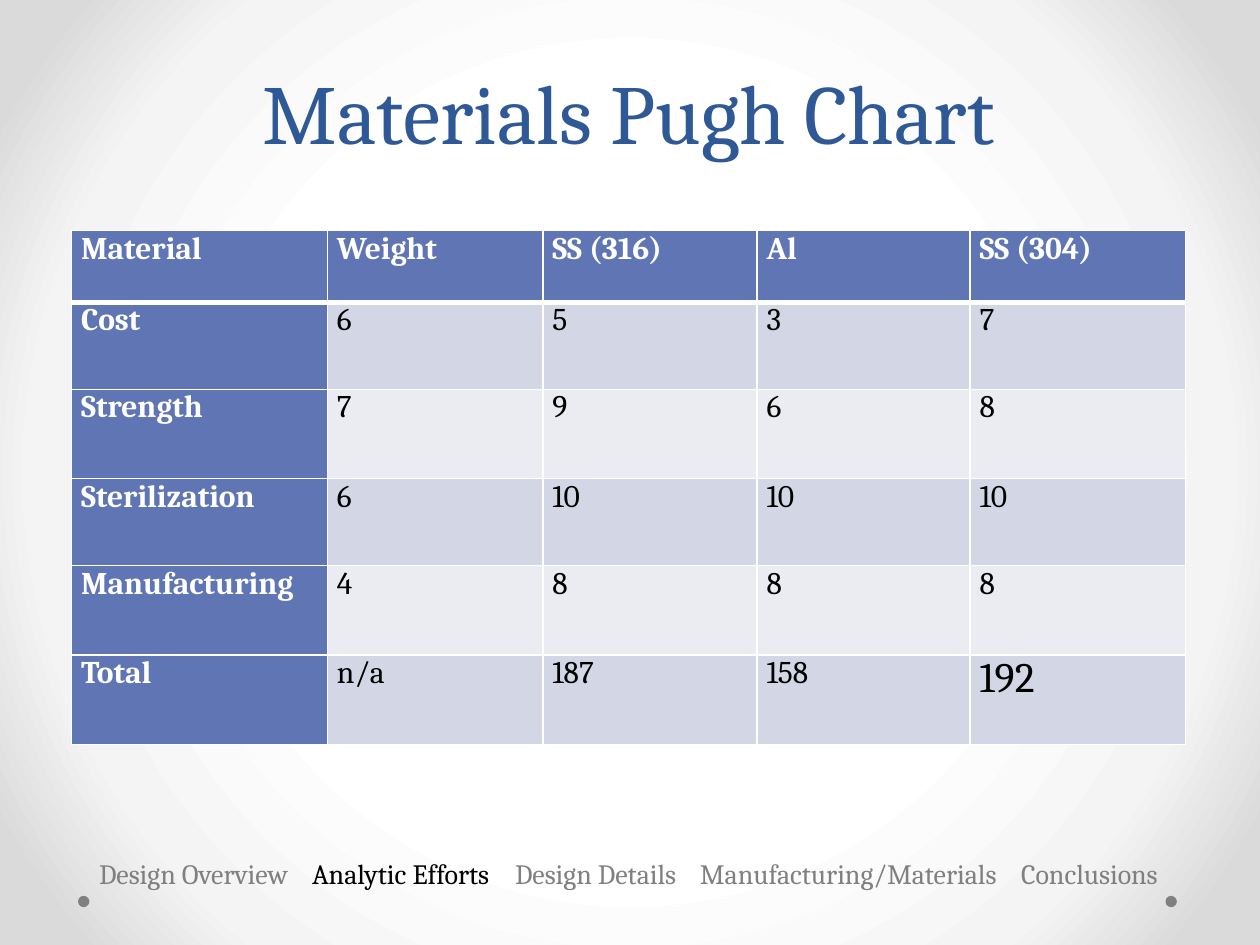
from pptx import Presentation
from pptx.dml.color import RGBColor
from pptx.enum.shapes import MSO_SHAPE as Shape
from pptx.enum.text import MSO_ANCHOR as Anchor, MSO_AUTO_SIZE as AutoSize, PP_ALIGN as Align
from pptx.oxml import parse_xml
from pptx.oxml.ns import nsdecls
from pptx.util import Pt

FONT = "Cambria"
COLORS = {
    "white": "FFFFFF",
    "mist": "F4F4F4",
    "silver": "DADADA",
    "gray": "808080",
    "black": "000000",
    "title": "2F5897",
    "header": "6076B4",
    "band_dark": "D2D6E5",
    "band_light": "EAECF2",
}
COLUMN_WIDTHS = [146.2, 123.1, 122.4, 121.7, 123.1]
ROW_HEIGHTS = [41, 49.7, 51.1, 49.7, 51.1, 51.1]
PUGH_ROWS = [
    ["Material", "Weight", "SS (316)", "Al", "SS (304)"],
    ["Cost", "6", "5", "3", "7"],
    ["Strength", "7", "9", "6", "8"],
    ["Sterilization", "6", "10", "10", "10"],
    ["Manufacturing", "4", "8", "8", "8"],
    ["Total", "n/a", "187", "158", "192"],
]
SECTIONS = ["Design Overview", "Analytic Efforts", "Design Details",
            "Manufacturing/Materials", "Conclusions"]
CURRENT_SECTION = "Analytic Efforts"
SECTION_TABS = [121.7, 237.7, 343.4, 526.9]


def rgb(name):
    return RGBColor.from_string(COLORS[name])


def add_run(paragraph, text, size, color, bold=False):
    run = paragraph.add_run()
    run.text = text
    run.font.name = FONT
    run.font.size = Pt(size)
    run.font.bold = bold
    run.font.color.rgb = rgb(color)


def set_background(slide):
    stops = "".join(
        f'<a:gs pos="{percent * 1000}"><a:srgbClr val="{COLORS[name]}"/></a:gs>'
        for percent, name in [(50, "white"), (76, "mist"), (92, "silver")])
    background = parse_xml(
        f'<p:bg {nsdecls("p", "a")}><p:bgPr><a:gradFill rotWithShape="1">'
        f'<a:gsLst>{stops}</a:gsLst><a:path path="circle">'
        '<a:fillToRect l="50000" t="50000" r="50000" b="50000"/></a:path>'
        '</a:gradFill><a:effectLst/></p:bgPr></p:bg>')
    slide.element.cSld.insert(0, background)


def add_dot(slide, left):
    dot = slide.shapes.add_shape(Shape.OVAL, Pt(left), Pt(511.9), Pt(6.5), Pt(6.5))
    dot.shadow.inherit = False
    dot.fill.solid()
    dot.fill.fore_color.rgb = rgb("gray")
    dot.line.fill.background()


def set_title(slide, text):
    title = slide.shapes.title
    title.left, title.top, title.width, title.height = Pt(35.3), Pt(-30.2), Pt(648), Pt(126)
    frame = title.text_frame
    frame.vertical_anchor = Anchor.BOTTOM
    frame.auto_size = AutoSize.NONE
    paragraph = frame.paragraphs[0]
    paragraph.alignment = Align.CENTER
    paragraph.line_spacing = Pt(58)
    add_run(paragraph, text, 48, "title")


def set_borders(cell, bottom_width):
    properties = cell._tc.get_or_add_tcPr()
    widths = {"lnL": 1, "lnR": 1, "lnT": 1, "lnB": bottom_width}
    for index, (side, width) in enumerate(widths.items()):
        properties.insert(index, parse_xml(
            f'<a:{side} {nsdecls("a")} w="{Pt(width)}"><a:solidFill>'
            f'<a:srgbClr val="{COLORS["white"]}"/></a:solidFill></a:{side}>'))


def add_pugh_table(slide):
    table = slide.shapes.add_table(
        len(PUGH_ROWS), len(COLUMN_WIDTHS), Pt(41), Pt(131.8),
        Pt(sum(COLUMN_WIDTHS)), Pt(sum(ROW_HEIGHTS))).table
    for column, width in zip(table.columns, COLUMN_WIDTHS):
        column.width = Pt(width)
    for row, height in zip(table.rows, ROW_HEIGHTS):
        row.height = Pt(height)

    for row_index, values in enumerate(PUGH_ROWS):
        band = "band_dark" if row_index % 2 else "band_light"
        for column_index, value in enumerate(values):
            cell = table.cell(row_index, column_index)
            is_header = row_index == 0 or column_index == 0
            is_winner = value == "192"
            cell.margin_left = cell.margin_right = Pt(5.4)
            cell.margin_top = cell.margin_bottom = Pt(0)
            cell.fill.solid()
            cell.fill.fore_color.rgb = rgb("header" if is_header else band)
            set_borders(cell, 3 if row_index == 0 else 1)
            add_run(cell.text_frame.paragraphs[0], value, 24 if is_winner else 18,
                    "white" if is_header else "black", bold=is_header)


def add_section_bar(slide):
    box = slide.shapes.add_textbox(Pt(14.4), Pt(486), Pt(689.8), Pt(26.6))
    frame = box.text_frame
    frame.word_wrap = True
    frame.margin_left = Pt(42.2)
    paragraph = frame.paragraphs[0]
    # Tab stops space the section names
    stops = "".join(f'<a:tab pos="{Pt(stop)}" algn="l"/>' for stop in SECTION_TABS)
    paragraph._p.get_or_add_pPr().append(
        parse_xml(f'<a:tabLst {nsdecls("a")}>{stops}</a:tabLst>'))
    for index, section in enumerate(SECTIONS):
        color = "black" if section == CURRENT_SECTION else "gray"
        add_run(paragraph, "\t" + section if index else section, 16, color)


def main():
    presentation = Presentation()
    presentation.slide_width, presentation.slide_height = Pt(720), Pt(540)
    slide = presentation.slides.add_slide(presentation.slide_layouts[5])

    # Backdrop
    set_background(slide)
    for left in (666, 44.6):
        add_dot(slide, left)

    # Content
    set_title(slide, "Materials Pugh Chart")
    add_pugh_table(slide)
    add_section_bar(slide)

    presentation.save("out.pptx")


if __name__ == "__main__":
    main()
